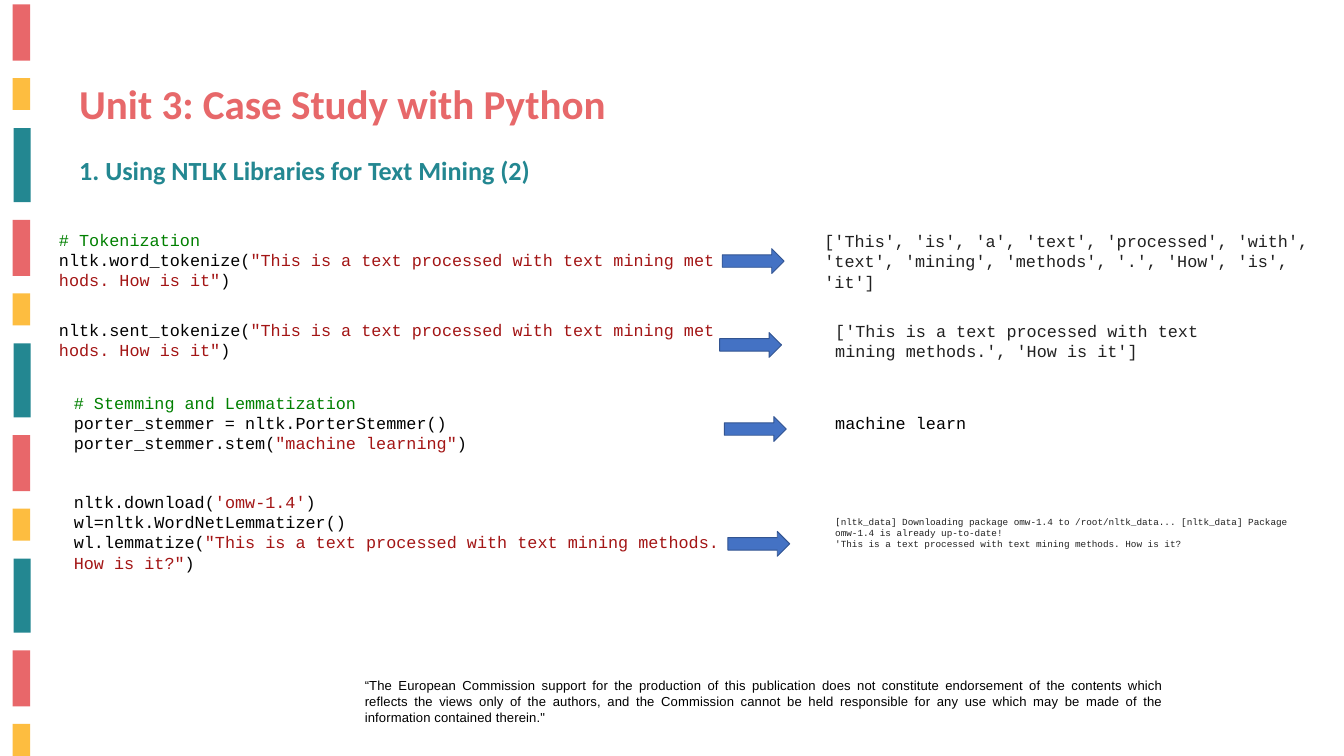
from pptx import Presentation
from pptx import util as u
from pptx.dml.color import RGBColor
from pptx.enum import shapes, text
from pptx.oxml.xmlchemy import OxmlElement

RED, GOLD, TEAL = "E8676A", "FDBD40", "238791"
INK, STRING, NOTE, RESULT = "000000", "A31515", "008000", "212121"
MONO = "Courier New"
CODE = {"name": MONO, "size": u.Pt(18)}
SMALL = {"name": MONO, "size": u.Pt(10)}

TOKEN = '"This is a text processed with text mining methods. How is it"'
ROWS = [
    {"box": (1.98, 8.56, 48.18, 2.57), "arrow": (25.32, 0.84),
     "out": (28.93, 0.05, 19.25, 2.57),
     "code": [[("# Tokenization", NOTE)],
              [("nltk.word_tokenize(", INK), (TOKEN, STRING), (")", INK)]],
     "result": [[("['This', 'is', 'a', 'text', 'processed', 'with', 'text', "
                  "'mining', 'methods', '.', 'How', 'is', 'it']", RESULT)]]},
    {"box": (1.98, 11.96, 45.14, 1.8), "arrow": (25.22, 0.61),
     "out": (29.34, 0.03, 15.8, 1.8),
     "code": [[("nltk.sent_tokenize(", INK), (TOKEN, STRING), (")", INK)]],
     "result": [[("['This is a text processed with text mining methods.', "
                  "'How is it']", RESULT)]]},
    {"box": (2.54, 14.71, 34.27, 2.57), "arrow": (24.84, 1.04),
     "out": (28.78, 0.76, 5.49, 1.02), "wrap": False,
     "code": [[("# Stemming and Lemmatization", NOTE)],
              [("porter_stemmer = nltk.PorterStemmer()", INK)],
              [("porter_stemmer.stem(", INK), ('"machine learning"', STRING),
               (")", INK)]],
     "result": [[("machine learn", INK)]]},
    {"box": (2.54, 18.47, 47.2, 3.33), "arrow": (24.97, 1.62),
     "out": (28.78, 1.04, 18.42, 1.27), "panel": True,
     "code": [[("nltk.download(", INK), ("'omw-1.4'", STRING), (")", INK)],
              [("wl=nltk.WordNetLemmatizer()", INK)],
              [("wl.lemmatize(", INK),
               ('"This is a text processed with text mining methods. '
                'How is it?"', STRING), (")", INK)]],
     "result": [[("[", RESULT),
                 ("nltk_data] Downloading package omw-1.4 to /root/nltk_data... "
                  "[nltk_data] Package omw-1.4 is already up-to-date!", RESULT)],
                [("'This is a text processed with text mining methods. "
                  "How is it?", RESULT)]]},
]


def color(code):
    return RGBColor.from_string(code)


def cm(box):
    return [u.Cm(v) for v in box]


def put(item, fmt):
    for key, value in fmt.items():
        setattr(item, key, value)


def write(frame, lines, fmt, align=text.PP_ALIGN.LEFT, wrap=True):
    put(frame, {"word_wrap": wrap, "auto_size": text.MSO_AUTO_SIZE.SHAPE_TO_FIT_TEXT})
    for i, line in enumerate(lines):
        para = frame.add_paragraph() if i else frame.paragraphs[0]
        put(para, {"alignment": align, "space_before": u.Pt(0)})
        for words, tint in line:
            run = para.add_run()
            run.text = words
            put(run.font, fmt)
            run.font.color.rgb = color(tint)


def add_box(slide, box, lines, fmt, **more):
    frame = slide.shapes.add_textbox(*cm(box)).text_frame
    write(frame, lines, fmt, **more)
    return frame


def add_form(slide, kind, box, fill, line=None):
    form = slide.shapes.add_shape(kind, *cm(box))
    form.shadow.inherit = False
    form.fill.solid()
    form.fill.fore_color.rgb = color(fill)
    if line:
        form.line.color.rgb = color(line)
        form.line.width = u.Pt(1)
    else:
        form.line.fill.background()
    return form


def add_stripes(slide, box):
    left, top, width, height = box
    kinds = [(RED, 0, 0, 0.66, 2.12), (GOLD, 0, 2.78, 0.66, 1.21),
             (TEAL, 0.04, 4.67, 0.64, 2.8)]
    pitch = 8.14
    for i in range(4):
        for fill, x, y, w, h in kinds:
            y += i * pitch
            if y < height:
                add_form(slide, shapes.MSO_SHAPE.RECTANGLE,
                         (left + x, top + y, w, h), fill)


def add_heads(slide, box):
    left, top, width, height = box
    title, body = slide.shapes.title, slide.placeholders[1]
    heads = [(title, "Unit 3: Case Study with Python", "E7686A", 44, 0, 25.6, 2.13),
             (body, "1. Using NTLK Libraries for Text Mining (2)", TEAL, 28,
              2.87, width, 1.45)]
    for holder, words, tint, size, y, w, h in heads:
        put(holder, dict(zip(("left", "top", "width", "height"),
                             cm((left, top + y, w, h)))))
        frame = holder.text_frame
        frame.vertical_anchor = text.MSO_ANCHOR.TOP
        prop = frame.paragraphs[0]._p.get_or_add_pPr()
        prop.set("marL", "0")
        prop.set("indent", "0")
        prop.append(OxmlElement("a:buNone"))
        write(frame, [[(words, tint)]],
              {"name": "Calibri", "size": u.Pt(size), "bold": True})


def add_row(slide, row):
    left, top, width, height = row["box"]
    fixed = [[(words.replace(" ", chr(160)), tint) for words, tint in line]
             for line in row["code"]]
    add_box(slide, (left, top, 25.4, height), fixed, CODE)

    x, y = row["arrow"]
    add_form(slide, shapes.MSO_SHAPE.RIGHT_ARROW,
             (left + x, top + y, 2.34, 0.94), "4472C4", "325491")

    x, y, w, h = row["out"]
    spot = (left + x, top + y, w, h)
    if row.get("panel"):
        panel = add_form(slide, shapes.MSO_SHAPE.RECTANGLE, spot, "FFFFFF")
        frame = panel.text_frame
        put(frame, {"margin_top": 0, "margin_bottom": 0,
                    "vertical_anchor": text.MSO_ANCHOR.MIDDLE})
        write(frame, row["result"], SMALL)
        frame.paragraphs[0].runs[0].font.name = "DejaVu Sans Mono"
    else:
        add_box(slide, spot, row["result"], CODE, wrap=row.get("wrap", True))


def add_footer(slide, box):
    words = ("“The European Commission support for the production of this "
             "publication does not constitute endorsement of the contents which "
             "reflects the views only of the authors, and the Commission cannot "
             "be held responsible for any use which may be made of the "
             "information contained therein.\"")
    frame = add_box(slide, box, [[(words, INK)]],
                    {"name": "Arial", "size": u.Pt(14)},
                    align=text.PP_ALIGN.JUSTIFY)
    frame.paragraphs[0].runs[0]._r.get_or_add_rPr().set("spc", "10")


def main():
    deck = Presentation()
    put(deck, {"slide_width": u.Cm(50.8), "slide_height": u.Cm(28.58)})
    slide = deck.slides.add_slide(deck.slide_layouts[1])
    add_stripes(slide, (0.48, 0.17, 0.68, 28.4))
    add_footer(slide, (13.54, 25.5, 30.68, 2.06))
    add_heads(slide, (2.74, 2.84, 39.57, 4.32))
    for row in ROWS:
        add_row(slide, row)
    deck.save("out.pptx")


if __name__ == "__main__":
    main()
